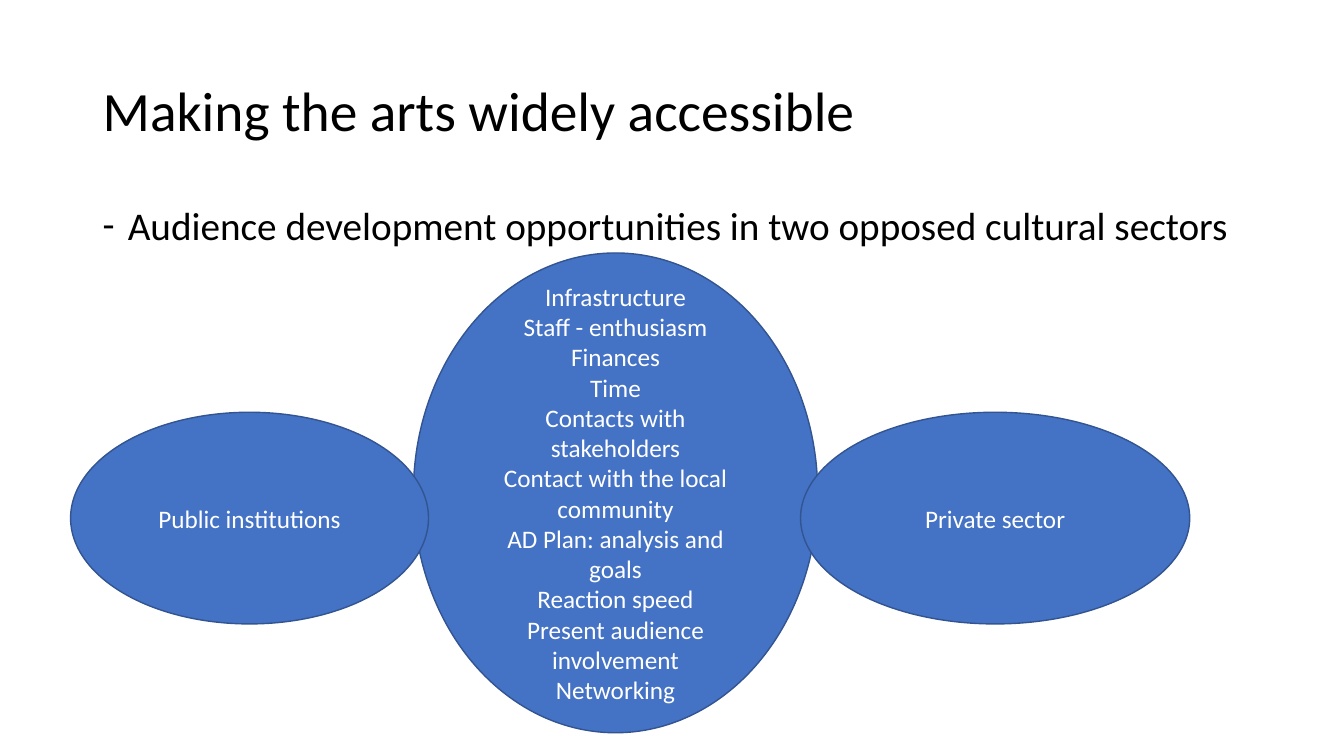
from pptx import Presentation
from pptx import util as u
from pptx.dml.color import RGBColor
from pptx.enum import shapes, text
from pptx.oxml.ns import qn
from lxml import etree

COLORS = {"ink": "000000", "blue": "4472C4", "edge": "325491", "white": "FFFFFF"}
SHARED_FACTORS = [
    "Infrastructure",
    "Staff - enthusiasm",
    "Finances",
    "Time",
    "Contacts with stakeholders",
    "Contact with the local community",
    "AD Plan: analysis and goals",
    "Reaction speed",
    "Present audience involvement",
    "Networking",
]
SECTORS = [("Public institutions", 0.7, 3.55), ("Private sector", 7.94, 3.86)]
SECTOR_TOP, SECTOR_HEIGHT = 4.09, 2.1


def rgb(name):
    return RGBColor.from_string(COLORS[name])


def add_dash(paragraph, indent):
    """Give the paragraph a dash bullet with a hanging indent."""
    props = paragraph._p.get_or_add_pPr()
    props.set("marL", str(u.Inches(indent)))
    props.set("indent", str(-u.Inches(indent)))
    etree.SubElement(props, qn("a:buFont")).set("typeface", "Calibri")
    etree.SubElement(props, qn("a:buChar")).set("char", "-")


def write(frame, lines, size, color="ink", align=text.PP_ALIGN.LEFT,
          anchor=text.MSO_ANCHOR.TOP, spacing=None, dash_indent=None):
    frame.word_wrap = True
    frame.vertical_anchor = anchor
    for index, line in enumerate(lines):
        paragraph = frame.add_paragraph() if index else frame.paragraphs[0]
        paragraph.alignment = align
        if spacing:
            paragraph.line_spacing = spacing
        if dash_indent:
            add_dash(paragraph, dash_indent)
        run = paragraph.add_run()
        run.text = line
        run.font.name = "Calibri"
        run.font.size = u.Pt(size)
        run.font.color.rgb = rgb(color)


class SlideBuilder:
    def __init__(self, slide):
        self.slide = slide

    def text_box(self, bounds, lines, size, **style):
        box = self.slide.shapes.add_textbox(*map(u.Inches, bounds))
        write(box.text_frame, lines, size, **style)

    def ellipse(self, bounds, lines):
        oval = self.slide.shapes.add_shape(
            shapes.MSO_SHAPE.OVAL, *map(u.Inches, bounds))
        oval.shadow.inherit = False
        oval.fill.solid()
        oval.fill.fore_color.rgb = rgb("blue")
        oval.line.color.rgb = rgb("edge")
        oval.line.width = u.Pt(1)
        write(oval.text_frame, lines, 18, color="white",
              align=text.PP_ALIGN.CENTER, anchor=text.MSO_ANCHOR.MIDDLE)


def main():
    deck = Presentation()
    deck.slide_width, deck.slide_height = u.Inches(13.33), u.Inches(7.5)
    builder = SlideBuilder(deck.slides.add_slide(deck.slide_layouts[6]))

    builder.text_box((0.92, 0.4, 11.5, 1.45), ["Making the arts widely accessible"],
                     39.6, anchor=text.MSO_ANCHOR.MIDDLE, spacing=0.9)
    builder.text_box((0.92, 2, 11.5, 4.76),
                     ["Audience development opportunities in two opposed cultural sectors"],
                     28, spacing=0.9, dash_indent=0.25)
    builder.ellipse((4.1, 2.51, 4.01, 4.76), SHARED_FACTORS)
    for sector, left, width in SECTORS:
        builder.ellipse((left, SECTOR_TOP, width, SECTOR_HEIGHT), [sector])

    deck.save("out.pptx")


if __name__ == "__main__":
    main()
